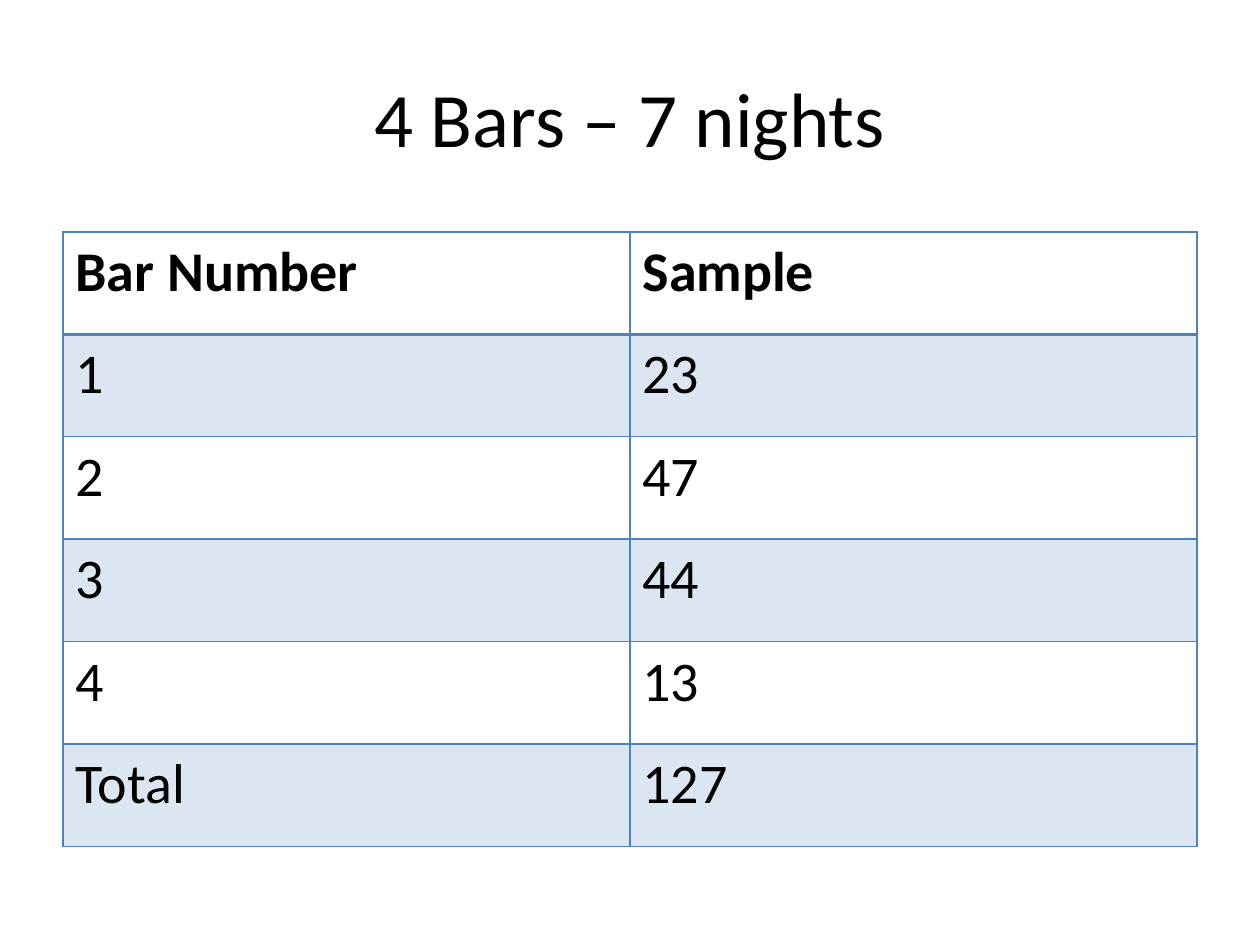
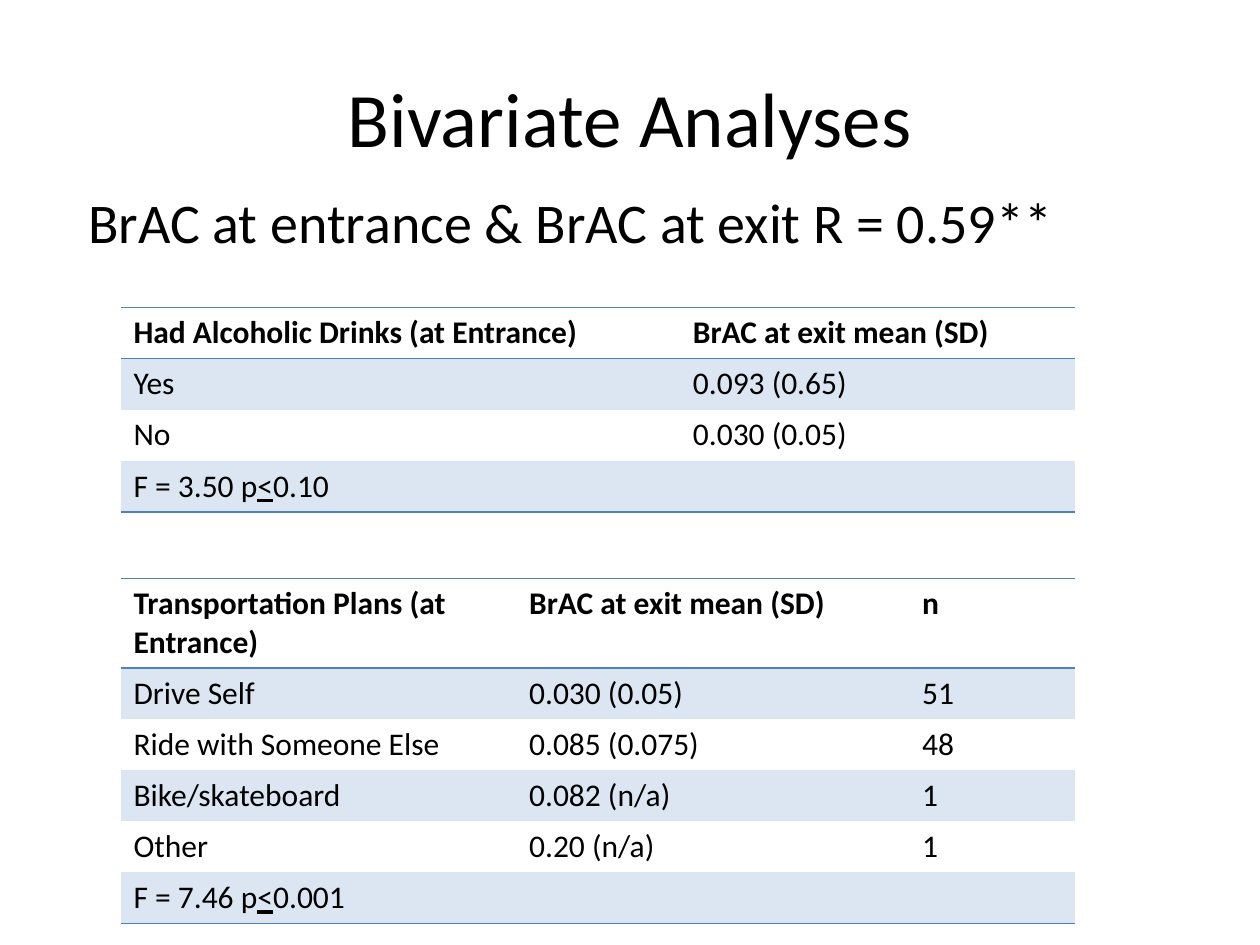
from lxml import etree
from pptx import Presentation
from pptx.dml.color import RGBColor
from pptx.enum.text import MSO_ANCHOR, PP_ALIGN
from pptx.oxml.ns import qn
from pptx.util import Inches, Pt

CENTER, LEFT = PP_ALIGN.CENTER, PP_ALIGN.LEFT
MIDDLE, TOP = MSO_ANCHOR.MIDDLE, MSO_ANCHOR.TOP
TITLE_AND_BODY, TITLE_ONLY = 1, 5
COLOURS = {"text": "000000", "line": "4F81BD", "band": "DCE6F2", "page": "FFFFFF"}
FONT = "Calibri"


def colour(name):
    return RGBColor.from_string(COLOURS[name])


def write(frame, text, size=18, bold=False, align=LEFT, anchor=TOP, underlined=None):
    frame.word_wrap = True
    frame.vertical_anchor = anchor
    para = frame.paragraphs[0]
    para.alignment = align
    parts = text.partition(underlined) if underlined else (text,)
    for part in filter(None, parts):
        span = para.add_run()
        span.text = part
        span.font.name = FONT
        span.font.size = Pt(size)
        span.font.bold = bold
        span.font.underline = part == underlined
        span.font.color.rgb = colour("text")
    return para


def set_borders(cell, **widths):
    properties = cell._tc.get_or_add_tcPr()
    for index, side in enumerate("LRTB"):
        width = widths[side]
        line = etree.Element(qn(f"a:ln{side}"), w=str(Pt(width)))
        if width:
            fill = etree.SubElement(line, qn("a:solidFill"))
            etree.SubElement(fill, qn("a:srgbClr"), val=COLOURS["line"])
        else:
            etree.SubElement(line, qn("a:noFill"))
        properties.insert(index, line)


class Deck:
    def __init__(self):
        self.deck = Presentation()
        self.deck.slide_width = Inches(10)
        self.deck.slide_height = Inches(7.5)
        self.page = None

    def add_page(self, title, layout):
        self.page = self.deck.slides.add_slide(self.deck.slide_layouts[layout])
        background = self.page.background.fill
        background.solid()
        background.fore_color.rgb = colour("page")
        box = self.page.shapes.title
        self.place(box, 0.5, 0.3, 9, 1.25)
        write(box.text_frame, title, size=44, align=CENTER, anchor=MIDDLE)

    def place(self, box, left, top, width, height):
        box.left, box.top = Inches(left), Inches(top)
        box.width, box.height = Inches(width), Inches(height)

    def add_body(self, text):
        box = self.page.placeholders[1]
        self.place(box, 0.5, 1.44, 9, 1.01)
        box.text_frame.margin_left = Inches(0.2)
        para = write(box.text_frame, text, size=32)
        properties = para._p.get_or_add_pPr()
        properties.set("marL", "0")
        properties.set("indent", "0")
        etree.SubElement(properties, qn("a:buNone"))

    def add_table(self, rows, left, top, columns, height, size, rules, sides=0):
        shape = self.page.shapes.add_table(
            len(rows), len(columns), Inches(left), Inches(top),
            Inches(sum(columns)), Inches(height))
        table = shape.table
        table.first_row = table.horz_banding = False
        for column, width in zip(table.columns, columns):
            column.width = Inches(width)
        for index, values in enumerate(rows):
            table.rows[index].height = Inches(height / len(rows))
            for cell, value in zip(table.rows[index].cells, values):
                write(cell.text_frame, value, size=size, bold=index == 0, underlined="<")
                if index % 2:
                    cell.fill.solid()
                    cell.fill.fore_color.rgb = colour("band")
                else:
                    cell.fill.background()
                set_borders(cell, L=sides, R=sides,
                            T=rules.get(index, 0), B=rules.get(index + 1, 0))


def add_sample_page(deck):
    deck.add_page("4 Bars – 7 nights", TITLE_ONLY)
    rows = [("Bar Number", "Sample"), ("1", "23"), ("2", "47"),
            ("3", "44"), ("4", "13"), ("Total", "127")]
    rules = {line: 2 if line == 1 else 1 for line in range(len(rows) + 1)}
    deck.add_table(rows, 0.5, 1.84, (4.5, 4.5), 4.88, 32, rules, sides=1)


def add_analyses_page(deck):
    deck.add_page("Bivariate Analyses", TITLE_AND_BODY)
    deck.add_body("BrAC at entrance & BrAC at exit R = 0.59**")
    drinks = [("Had Alcoholic Drinks (at Entrance)", "BrAC at exit mean (SD)"),
              ("Yes", "0.093 (0.65)"),
              ("No", "0.030 (0.05)"),
              ("F = 3.50 p<0.10", "")]
    transport = [("Transportation Plans (at Entrance)", "BrAC at exit mean (SD)", "n"),
                 ("Drive Self", "0.030 (0.05)", "51"),
                 ("Ride with Someone Else", "0.085 (0.075)", "48"),
                 ("Bike/skateboard", "0.082 (n/a)", "1"),
                 ("Other", "0.20 (n/a)", "1"),
                 ("F = 7.46 p<0.001", "", "")]
    for rows, top, columns, height in (
            (drinks, 2.44, (4.44, 3.13), 1.62),
            (transport, 4.59, (3.14, 3.12, 1.31), 2.43)):
        rules = dict.fromkeys((0, 1, len(rows)), 1)
        deck.add_table(rows, 0.96, top, columns, height, 18, rules)


def main():
    deck = Deck()
    add_sample_page(deck)
    add_analyses_page(deck)
    deck.deck.save("out.pptx")


if __name__ == "__main__":
    main()
